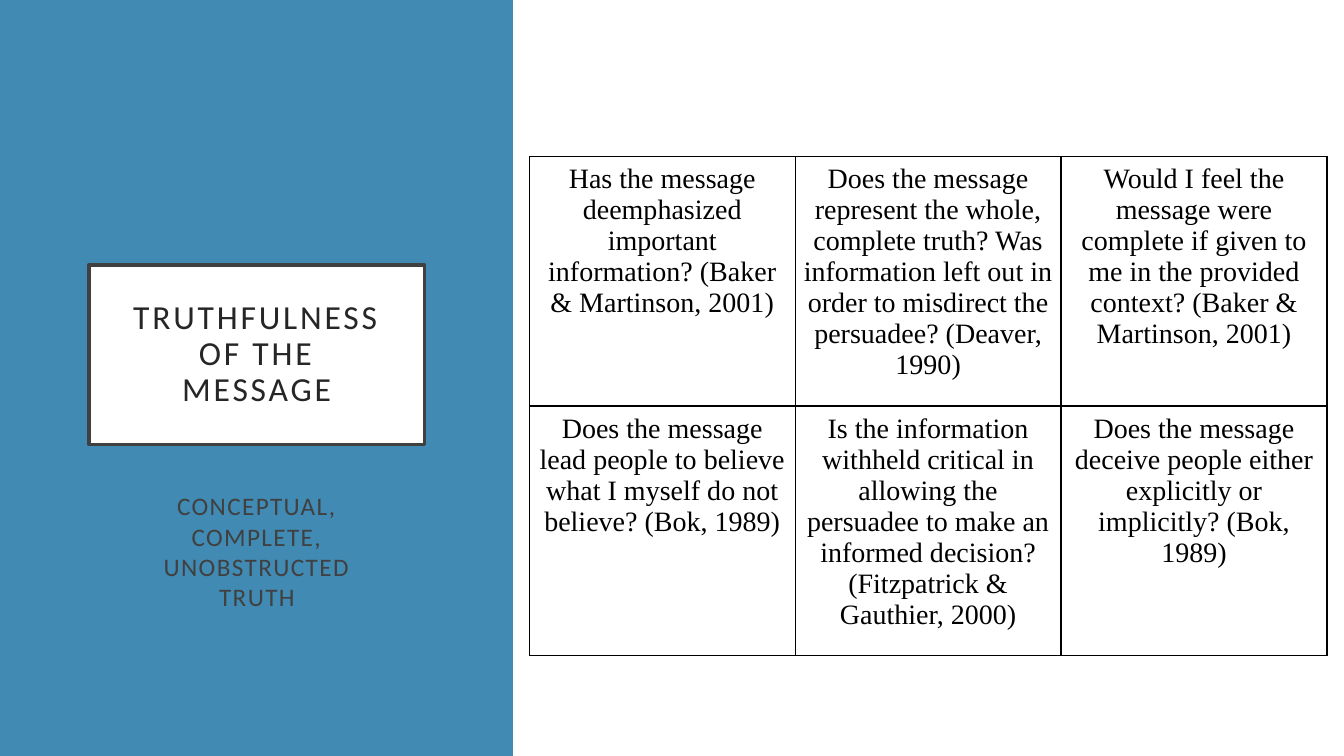
from dataclasses import dataclass

from lxml import etree
from pptx import Presentation
from pptx.dml.color import RGBColor
from pptx.enum.shapes import MSO_SHAPE
from pptx.enum.text import MSO_ANCHOR, PP_ALIGN
from pptx.oxml.ns import qn
from pptx.util import Cm, Pt

RECTANGLE = MSO_SHAPE.RECTANGLE
CENTER = PP_ALIGN.CENTER
TOP, MIDDLE, BOTTOM = MSO_ANCHOR.TOP, MSO_ANCHOR.MIDDLE, MSO_ANCHOR.BOTTOM

BLUE, WHITE, BLACK, GRAY, DARK = "418AB3", "FFFFFF", "000000", "404040", "262626"
COLUMN_WIDTH = 6.7
ROW_HEIGHTS = (6.1, 5.46)
CELL_MARGIN = 0.18

QUESTIONS = (
    (
        "Has the message deemphasized important information? (Baker & Martinson, 2001)",
        "Does the message represent the whole, complete truth? Was information left out "
        "in order to misdirect the persuadee? (Deaver, 1990)",
        "Would I feel the message were complete if given to me in the provided context? "
        "(Baker & Martinson, 2001)",
    ),
    (
        "Does the message lead people to believe what I myself do not believe? (Bok, 1989)",
        "Is the information withheld critical in allowing the persuadee to make an "
        "informed decision? (Fitzpatrick & Gauthier, 2000)",
        "Does the message deceive people either explicitly or implicitly? (Bok, 1989)",
    ),
)


@dataclass(frozen=True)
class Box:
    left: float
    top: float
    width: float
    height: float

    def lengths(self) -> tuple:
        return Cm(self.left), Cm(self.top), Cm(self.width), Cm(self.height)


@dataclass(frozen=True)
class TextStyle:
    font: str
    size: float
    color: str
    tracking: float = 0
    line_spacing: float = 1.0
    space_before: float = 0


TITLE_STYLE = TextStyle("Calibri", 24, DARK, tracking=2, line_spacing=0.9)
SUBTITLE_STYLE = TextStyle("Calibri", 18, GRAY, tracking=1, space_before=10)
QUESTION_STYLE = TextStyle("Times New Roman", 20, BLACK)


def rgb(color: str) -> RGBColor:
    return RGBColor.from_string(color)


def set_margins(holder, horizontal: float, vertical: float) -> None:
    holder.margin_left = holder.margin_right = Cm(horizontal)
    holder.margin_top = holder.margin_bottom = Cm(vertical)


def write_text(frame, text: str, style: TextStyle) -> None:
    frame.word_wrap = True
    para = frame.paragraphs[0]
    para.alignment = CENTER
    para.line_spacing = style.line_spacing
    para.space_before = Pt(style.space_before)
    span = para.add_run()
    span.text = text
    span.font.name = style.font
    span.font.size = Pt(style.size)
    span.font.color.rgb = rgb(style.color)
    if style.tracking:
        span.font._element.set("spc", str(round(style.tracking * 100)))


def add_white_rectangle(page, box: Box):
    shape = page.shapes.add_shape(RECTANGLE, *box.lengths())
    shape.shadow.inherit = False
    shape.fill.solid()
    shape.fill.fore_color.rgb = rgb(WHITE)
    shape.line.fill.background()
    return shape


def add_title(page) -> None:
    title = add_white_rectangle(page, Box(2.24, 6.68, 8.46, 4.52))
    title.line.color.rgb = rgb(GRAY)
    title.line.width = Pt(2.5)
    frame = title.text_frame
    frame.vertical_anchor = MIDDLE
    set_margins(frame, 0.76, 0.51)
    write_text(frame, "TRUTHFULNESS OF THE MESSAGE", TITLE_STYLE)


def add_subtitle(page) -> None:
    frame = page.shapes.add_textbox(*Box(3.12, 12.09, 6.71, 3.45).lengths()).text_frame
    frame.vertical_anchor = BOTTOM
    write_text(frame, "CONCEPTUAL, COMPLETE, UNOBSTRUCTED TRUTH", SUBTITLE_STYLE)


def add_cell_borders(cell, color: str, width: float) -> None:
    properties = cell._tc.get_or_add_tcPr()
    for position, side in enumerate(("a:lnL", "a:lnR", "a:lnT", "a:lnB")):
        line = etree.Element(qn(side), w=str(Pt(width)))
        fill = etree.SubElement(line, qn("a:solidFill"))
        etree.SubElement(fill, qn("a:srgbClr"), val=color)
        properties.insert(position, line)


def add_question_table(page) -> None:
    rows, columns = len(QUESTIONS), len(QUESTIONS[0])
    box = Box(13.34, 3.94, COLUMN_WIDTH * columns, sum(ROW_HEIGHTS))
    table = page.shapes.add_table(rows, columns, *box.lengths()).table
    table.first_row = table.horz_banding = False
    for column in table.columns:
        column.width = Cm(COLUMN_WIDTH)
    for row, height, questions in zip(table.rows, ROW_HEIGHTS, QUESTIONS):
        row.height = Cm(height)
        for cell, question in zip(row.cells, questions):
            cell.fill.solid()
            cell.fill.fore_color.rgb = rgb(WHITE)
            cell.vertical_anchor = TOP
            set_margins(cell, CELL_MARGIN, CELL_MARGIN)
            add_cell_borders(cell, BLACK, 1)
            write_text(cell.text_frame, question, QUESTION_STYLE)


def main() -> None:
    deck = Presentation()
    deck.slide_width, deck.slide_height = Cm(33.87), Cm(19.05)
    page = deck.slides.add_slide(deck.slide_layouts[6])
    page.background.fill.solid()
    page.background.fill.fore_color.rgb = rgb(BLUE)
    add_title(page)
    add_subtitle(page)
    add_white_rectangle(page, Box(12.93, 0, 20.94, 19.05))
    add_question_table(page)
    deck.save("out.pptx")


if __name__ == "__main__":
    main()
